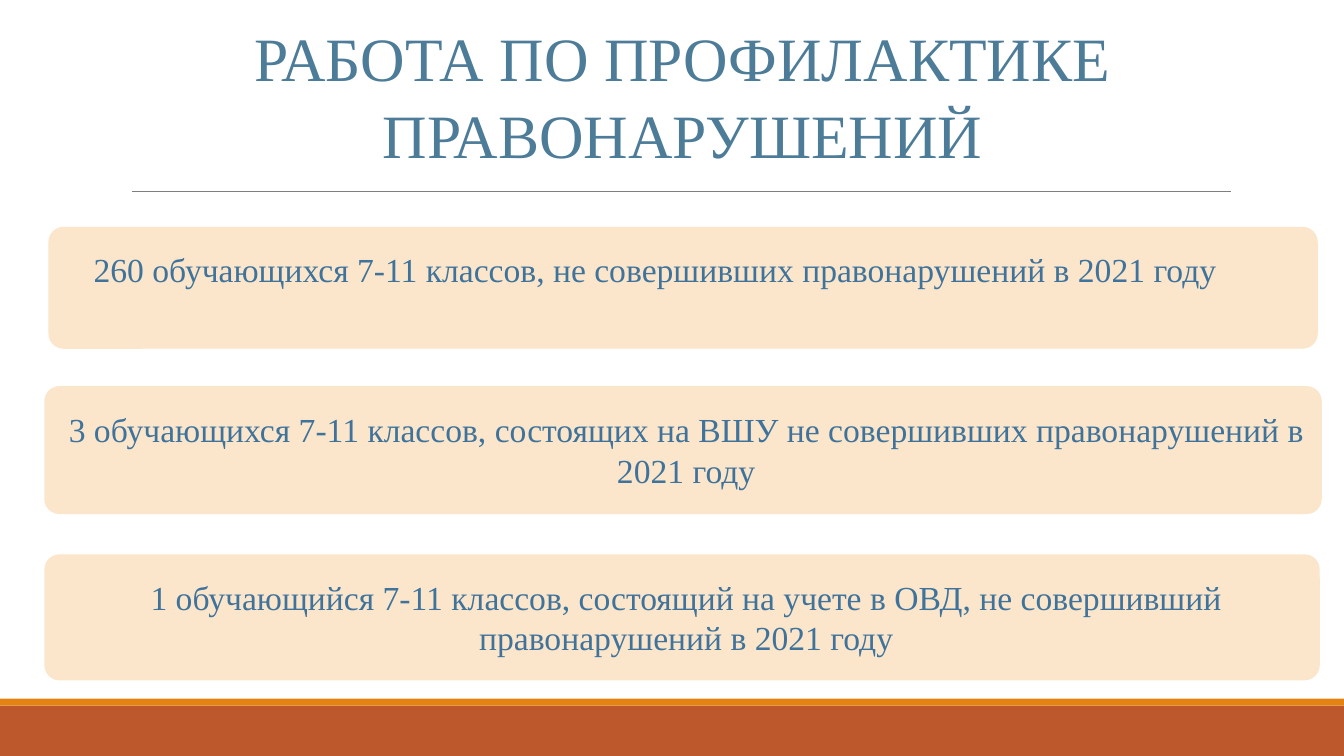
from dataclasses import dataclass

from lxml import etree
from pptx import Presentation
from pptx.dml.color import RGBColor
from pptx.enum.shapes import MSO_CONNECTOR, MSO_SHAPE
from pptx.enum.text import MSO_ANCHOR, PP_ALIGN
from pptx.oxml.ns import qn
from pptx.shapes.autoshape import Shape
from pptx.slide import Slide
from pptx.util import Inches, Pt

RECTANGLE, ROUNDED = MSO_SHAPE.RECTANGLE, MSO_SHAPE.ROUNDED_RECTANGLE
STRAIGHT = MSO_CONNECTOR.STRAIGHT
LEFT, CENTER, TOP = PP_ALIGN.LEFT, PP_ALIGN.CENTER, MSO_ANCHOR.TOP
BLANK_LAYOUT = 6
WIDTH, HEIGHT = Inches(13.33), Inches(7.5)
COLUMNS = ROWS = 100
CORNER_ROWS = 2


@dataclass(frozen=True)
class Theme:
    font: str = "Times New Roman"
    title_size: int = 44
    body_size: int = 24
    rule_width: float = 0.75
    title: str = "4D7C99"
    body: str = "3F739B"
    card: str = "FBE6CC"
    rule: str = "7F7F7F"
    stripe: str = "E48312"
    footer: str = "BD582C"


@dataclass(frozen=True)
class Area:
    """Left, top, width and height in grid columns and rows."""
    column: float
    row: float
    columns: float
    rows: float

    def lengths(self) -> tuple[int, int, int, int]:
        return (column_length(self.column), row_length(self.row),
                column_length(self.columns), row_length(self.rows))


@dataclass(frozen=True)
class Label:
    text: str
    area: Area
    size: int
    color: str
    alignment: PP_ALIGN = CENTER
    side_inset: float = 0.1
    top_inset: float = 0.05
    line_spacing: float = 1.0


@dataclass(frozen=True)
class Card:
    area: Area
    label: Label


THEME = Theme()
TITLE = Label("РАБОТА ПО ПРОФИЛАКТИКЕ ПРАВОНАРУШЕНИЙ", Area(3.3, 2, 95.05, 19.87),
              THEME.title_size, THEME.title, side_inset=0, top_inset=0.01,
              line_spacing=1.05)
RULE = Area(9.83, 25.33, 81.77, 0)
BANDS = [(Area(0, 93.33, 100, 6.67), THEME.footer),
         (Area(0, 92.4, 100, 0.93), THEME.stripe)]
CARDS = [
    Card(Area(3.6, 30, 94.45, 16.13),
         Label("260 обучающихся 7-11 классов, не совершивших правонарушений в 2021 году",
               Area(6.23, 32.27, 89.42, 10.8), THEME.body_size, THEME.body, LEFT)),
    Card(Area(3.3, 51.07, 95.05, 16.93),
         Label("3 обучающихся 7-11 классов, состоящих на ВШУ не совершивших "
               "правонарушений в 2021 году",
               Area(3.53, 53.47, 95.05, 12.13), THEME.body_size, THEME.body)),
    Card(Area(3.3, 73.33, 94.9, 16.67),
         Label("1 обучающийся 7-11 классов, состоящий на учете в ОВД, не совершивший "
               "правонарушений в 2021 году",
               Area(3.53, 75.6, 95.05, 12.13), THEME.body_size, THEME.body)),
]


def column_length(columns: float) -> int:
    return round(WIDTH * columns / COLUMNS)


def row_length(rows: float) -> int:
    return round(HEIGHT * rows / ROWS)


def apply_format(target: object, values: dict[str, object]) -> None:
    for name, value in values.items():
        setattr(target, name, value)


def draw_block(slide: Slide, kind: MSO_SHAPE, area: Area, color: str) -> Shape:
    shape = slide.shapes.add_shape(kind, *area.lengths())
    shape.shadow.inherit = False
    shape.fill.solid()
    shape.fill.fore_color.rgb = RGBColor.from_string(color)
    shape.line.fill.background()
    return shape


def draw_rule(slide: Slide, area: Area) -> None:
    left, top, width, height = area.lengths()
    rule = slide.shapes.add_connector(STRAIGHT, left, top, left + width, top + height)
    rule.line.color.rgb = RGBColor.from_string(THEME.rule)
    rule.line.width = Pt(THEME.rule_width)
    etree.SubElement(rule._element.spPr, qn("a:effectLst"))


def draw_label(slide: Slide, label: Label) -> None:
    frame = slide.shapes.add_textbox(*label.area.lengths()).text_frame
    side, top = Inches(label.side_inset), Inches(label.top_inset)
    apply_format(frame, {"word_wrap": True, "vertical_anchor": TOP,
                         "margin_left": side, "margin_right": side,
                         "margin_top": top, "margin_bottom": 0})
    paragraph = frame.paragraphs[0]
    apply_format(paragraph, {"alignment": label.alignment,
                             "line_spacing": label.line_spacing})
    run = paragraph.add_run()
    run.text = label.text
    apply_format(run.font, {"name": THEME.font, "size": Pt(label.size)})
    run.font.color.rgb = RGBColor.from_string(label.color)


def draw_card(slide: Slide, card: Card) -> None:
    block = draw_block(slide, ROUNDED, card.area, THEME.card)
    block.adjustments[0] = CORNER_ROWS / card.area.rows
    draw_label(slide, card.label)


def main() -> None:
    presentation = Presentation()
    apply_format(presentation, {"slide_width": WIDTH, "slide_height": HEIGHT})
    slide = presentation.slides.add_slide(presentation.slide_layouts[BLANK_LAYOUT])
    for area, color in BANDS:
        draw_block(slide, RECTANGLE, area, color)
    draw_rule(slide, RULE)
    for card in CARDS:
        draw_card(slide, card)
    draw_label(slide, TITLE)
    presentation.save("out.pptx")


if __name__ == "__main__":
    main()
